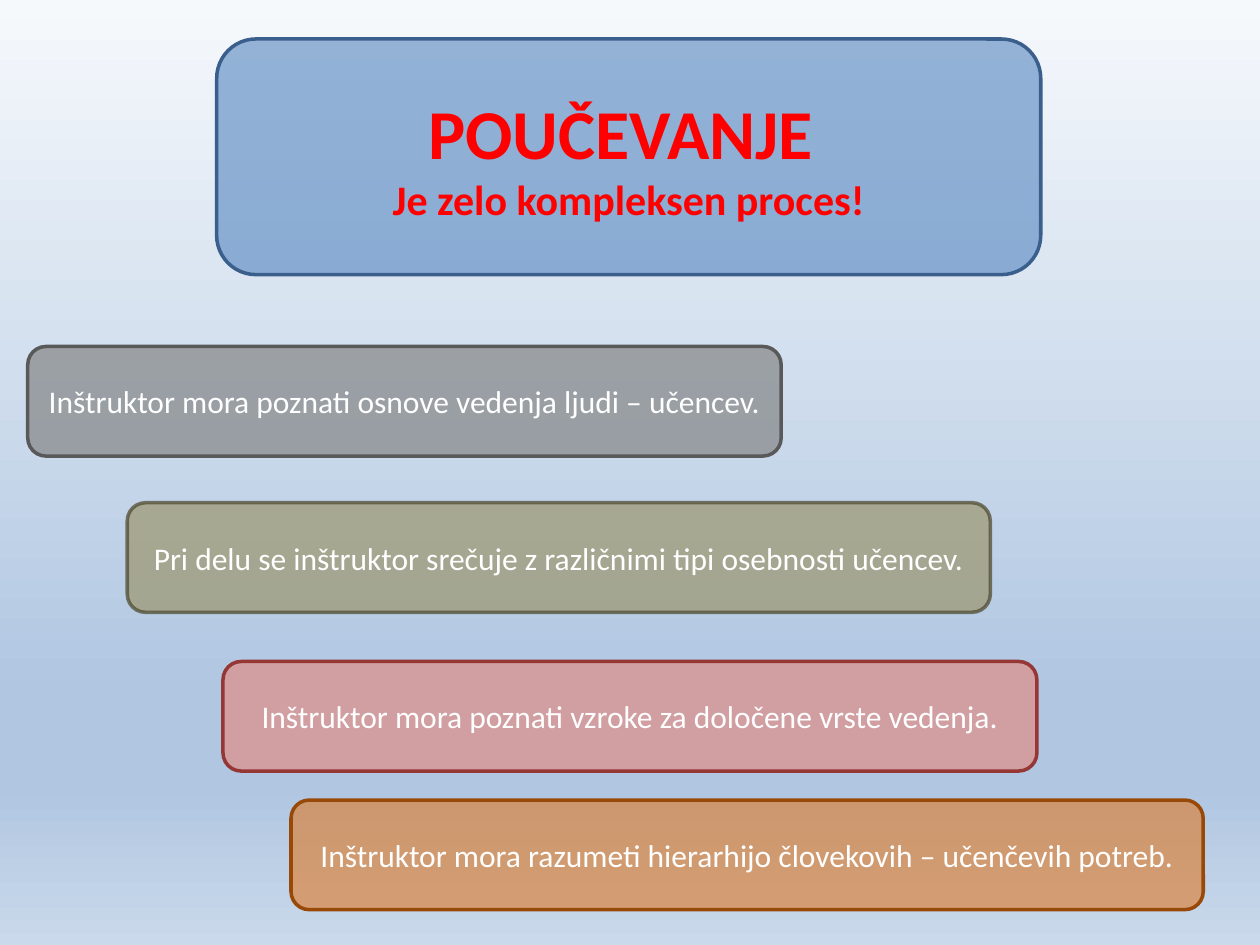
from copy import deepcopy

from lxml.etree import SubElement
from pptx import Presentation
from pptx.dml.color import RGBColor
from pptx.enum.shapes import MSO_SHAPE
from pptx.enum.text import MSO_ANCHOR, PP_ALIGN
from pptx.oxml.ns import qn
from pptx.util import Inches, Pt

RED = RGBColor(0xFF, 0x00, 0x00)
WHITE = RGBColor(0xFF, 0xFF, 0xFF)
BLUE = RGBColor(0x4F, 0x81, 0xBD)
DARK_BLUE = RGBColor(0x3A, 0x5F, 0x8C)
GREY = RGBColor(0x80, 0x80, 0x80)
DARK_GREY = RGBColor(0x59, 0x59, 0x59)
PINK = RGBColor(0xD9, 0x96, 0x94)
DARK_RED = RGBColor(0x95, 0x37, 0x35)
OLIVE = RGBColor(0x94, 0x8A, 0x54)
DARK_OLIVE = RGBColor(0x4A, 0x45, 0x2A)
ORANGE = RGBColor(0xE4, 0x6C, 0x0A)
BROWN = RGBColor(0x98, 0x48, 0x07)
SKY = [
    (0, RGBColor(0xF6, 0xF9, 0xFC)),
    (0.74, RGBColor(0xB0, 0xC6, 0xE1)),
    (0.83, RGBColor(0xB0, 0xC6, 0xE1)),
    (1, RGBColor(0xCA, 0xD9, 0xEB)),
]


class SlideBuilder:
    """Holds the text style and the current slide."""

    font_name = "Calibri"
    line_width = Pt(2)

    def __init__(self, page):
        self.page = page

    def background(self, stops):
        fill = self.page.background.fill
        fill.gradient()
        fill.gradient_angle = 270  # top to bottom
        stop_list = next(self.page.element.iter(qn("a:gsLst")))
        for _ in range(len(stops) - len(stop_list)):
            stop_list.append(deepcopy(stop_list[0]))
        for stop, (position, color) in zip(fill.gradient_stops, stops):
            stop.position = position
            stop.color.rgb = color

    def set_opacity(self, fill_parent, percent):
        color = next(fill_parent.iter(qn("a:srgbClr")))
        SubElement(color, qn("a:alpha")).set("val", str(percent * 1000))

    def box(self, place, fill, opacity, line, paragraphs, color=WHITE,
            bold=False, line_opacity=100):
        """Rounded box; paragraphs is a list of (text, point size)."""
        box = self.page.shapes.add_shape(
            MSO_SHAPE.ROUNDED_RECTANGLE, *map(Inches, place))
        box.shadow.inherit = False
        box.fill.solid()
        box.fill.fore_color.rgb = fill
        self.set_opacity(box.element.spPr.find(qn("a:solidFill")), opacity)
        box.line.color.rgb = line
        box.line.width = self.line_width
        if line_opacity < 100:
            self.set_opacity(box.element.spPr.find(qn("a:ln")), line_opacity)

        frame = box.text_frame
        frame.word_wrap = True
        frame.vertical_anchor = MSO_ANCHOR.MIDDLE
        for index, (text, size) in enumerate(paragraphs):
            para = frame.add_paragraph() if index else frame.paragraphs[0]
            para.text = text
            para.alignment = PP_ALIGN.CENTER
            para.font.name = self.font_name
            para.font.size = Pt(size)
            para.font.bold = bold
            para.font.color.rgb = color


def main():
    deck = Presentation()
    deck.slide_width, deck.slide_height = Inches(10), Inches(7.5)
    builder = SlideBuilder(deck.slides.add_slide(deck.slide_layouts[6]))
    builder.background(SKY)

    # Heading
    builder.box((1.72, 0.31, 6.54, 1.87), BLUE, 58, DARK_BLUE,
                [("POUČEVANJE ", 40), ("Je zelo kompleksen proces!", 24)],
                color=RED, bold=True)

    # Staircase of statements: left, top, width, fill, opacity, line, its opacity
    statements = [
        (0.22, 2.75, 5.98, GREY, 66, DARK_GREY, 100,
         "Inštruktor mora poznati osnove vedenja ljudi – učencev."),
        (1.01, 3.99, 6.85, OLIVE, 58, DARK_OLIVE, 69,
         "Pri delu se inštruktor srečuje z različnimi tipi osebnosti učencev."),
        (1.77, 5.25, 6.46, PINK, 81, DARK_RED, 100,
         "Inštruktor mora poznati vzroke za določene vrste vedenja."),
        (2.31, 6.35, 7.24, ORANGE, 53, BROWN, 100,
         "Inštruktor mora razumeti hierarhijo človekovih – učenčevih potreb."),
    ]
    for left, top, width, fill, opacity, line, line_opacity, text in statements:
        builder.box((left, top, width, 0.87), fill, opacity, line,
                    [(text, 18)], line_opacity=line_opacity)

    deck.save("out.pptx")


if __name__ == "__main__":
    main()
